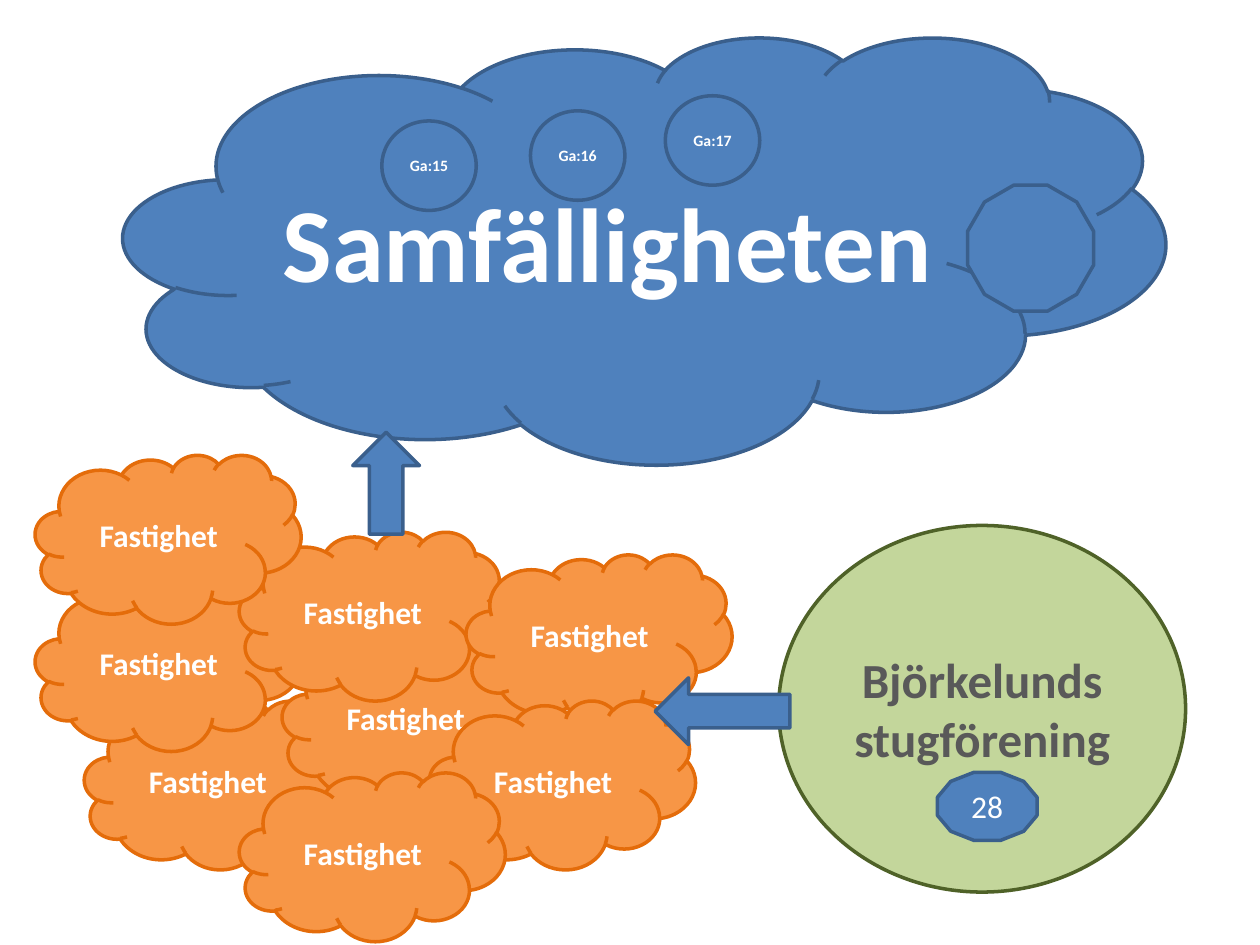
from dataclasses import dataclass

from pptx import Presentation
from pptx.dml.color import RGBColor
from pptx.enum.shapes import MSO_SHAPE
from pptx.enum.text import MSO_ANCHOR, PP_ALIGN
from pptx.util import Inches, Pt

CLOUD, OVAL = MSO_SHAPE.CLOUD, MSO_SHAPE.OVAL
LEFT, UP = MSO_SHAPE.LEFT_ARROW, MSO_SHAPE.UP_ARROW
BADGE = MSO_SHAPE.DODECAGON
MIDDLE, CENTER = MSO_ANCHOR.MIDDLE, PP_ALIGN.CENTER
BLANK = 6


@dataclass(frozen=True)
class Theme:
    font: str = "Calibri"
    white: str = "FFFFFF"
    gray: str = "595959"
    # Fill and line pairs
    blue: tuple = ("4F81BD", "3A5F8C")
    orange: tuple = ("F79646", "E46C0A")
    green: tuple = ("C3D69B", "4F6228")
    line: float = 2
    huge: float = 60
    large: float = 28
    body: float = 18
    small: float = 9


class Board:
    def __init__(self, slide, theme):
        self.slide, self.theme = slide, theme

    def shape(self, kind, box, paint):
        item = self.slide.shapes.add_shape(kind, *map(Inches, box))
        item.shadow.inherit = False
        fill, line = map(RGBColor.from_string, paint)
        item.fill.solid()
        item.fill.fore_color.rgb = fill
        item.line.color.rgb = line
        item.line.width = Pt(self.theme.line)
        return item

    def label(self, kind, box, paint, text, size, color=None, bold=True):
        """Add a shape with centred text, white unless a color is given."""
        frame = self.shape(kind, box, paint).text_frame
        frame.word_wrap = True
        frame.vertical_anchor = MIDDLE
        frame.text = text
        para = frame.paragraphs[0]
        para.alignment = CENTER
        font = para.runs[0].font
        font.name, font.size, font.bold = self.theme.font, Pt(size), bold
        font.color.rgb = RGBColor.from_string(color or self.theme.white)

    def facility(self, left, top, text):
        self.label(OVAL, (left, top, 0.75, 0.71), self.theme.blue,
                   text, self.theme.small)

    def property(self, left, top):
        self.label(CLOUD, (left, top, 2.11, 1.34), self.theme.orange,
                   "Fastighet", self.theme.body)


def main():
    deck = Presentation()
    deck.slide_width, deck.slide_height = Inches(10), Inches(7.5)
    theme = Theme()
    board = Board(deck.slides.add_slide(deck.slide_layouts[BLANK]), theme)

    board.label(CLOUD, (0.98, 0.29, 8.27, 3.39), theme.blue,
                "Samfälligheten", theme.huge)
    for left, top, text in [(4.21, 0.88, "Ga:16"), (3.03, 0.96, "Ga:15"),
                            (5.28, 0.76, "Ga:17")]:
        board.facility(left, top, text)

    # Back to front, since the clouds overlap
    for spot in [(0.67, 5.56), (0.28, 4.62), (2.24, 5.06), (1.9, 4.22),
                 (0.28, 3.61), (3.7, 4.4), (3.41, 5.56), (1.9, 6.13)]:
        board.property(*spot)

    board.label(OVAL, (6.18, 4.17, 3.23, 2.91), theme.green,
                "Björkelunds stugförening", theme.large, theme.gray)
    board.shape(LEFT, (5.2, 5.38, 1.07, 0.53), theme.blue)
    board.shape(UP, (2.8, 3.43, 0.53, 0.81), theme.blue)
    board.label(BADGE, (7.44, 6.13, 0.79, 0.54), theme.blue,
                "28", theme.body, bold=False)
    board.shape(BADGE, (7.68, 1.47, 1, 1), theme.blue)

    deck.save("out.pptx")


if __name__ == "__main__":
    main()
